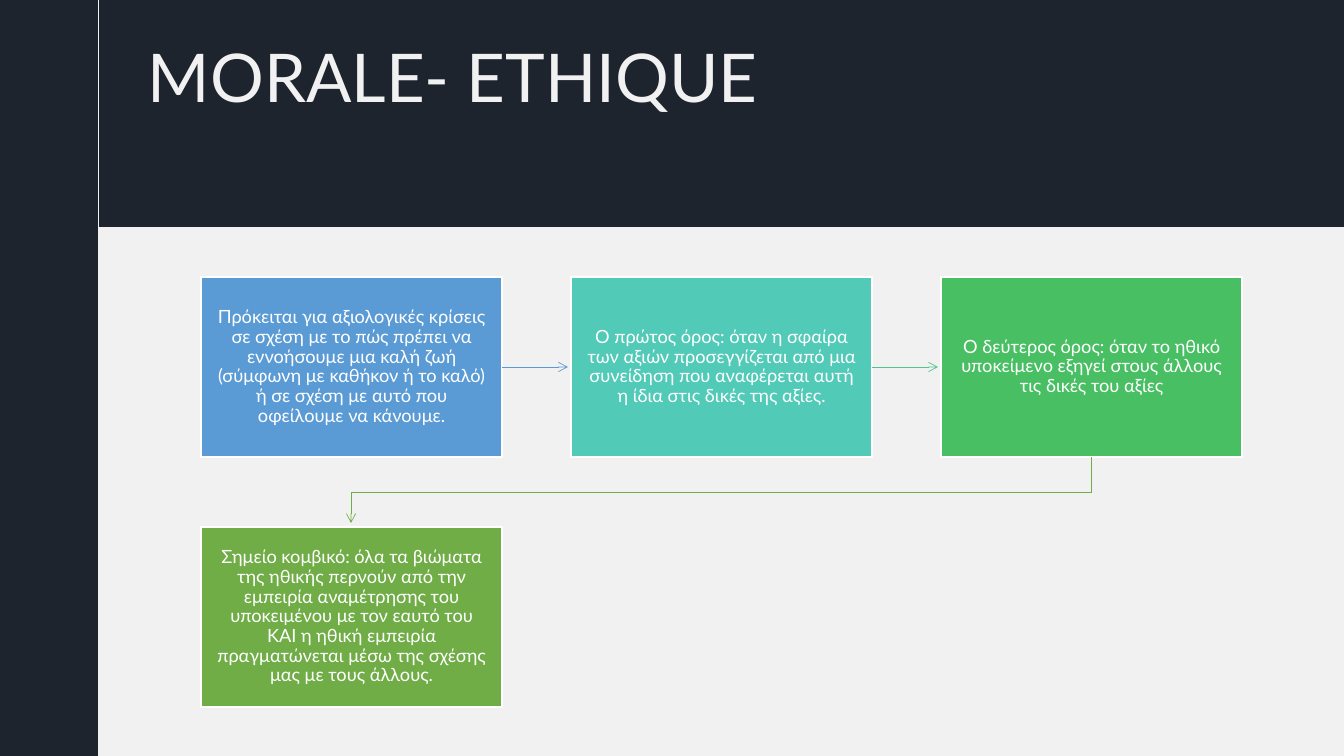
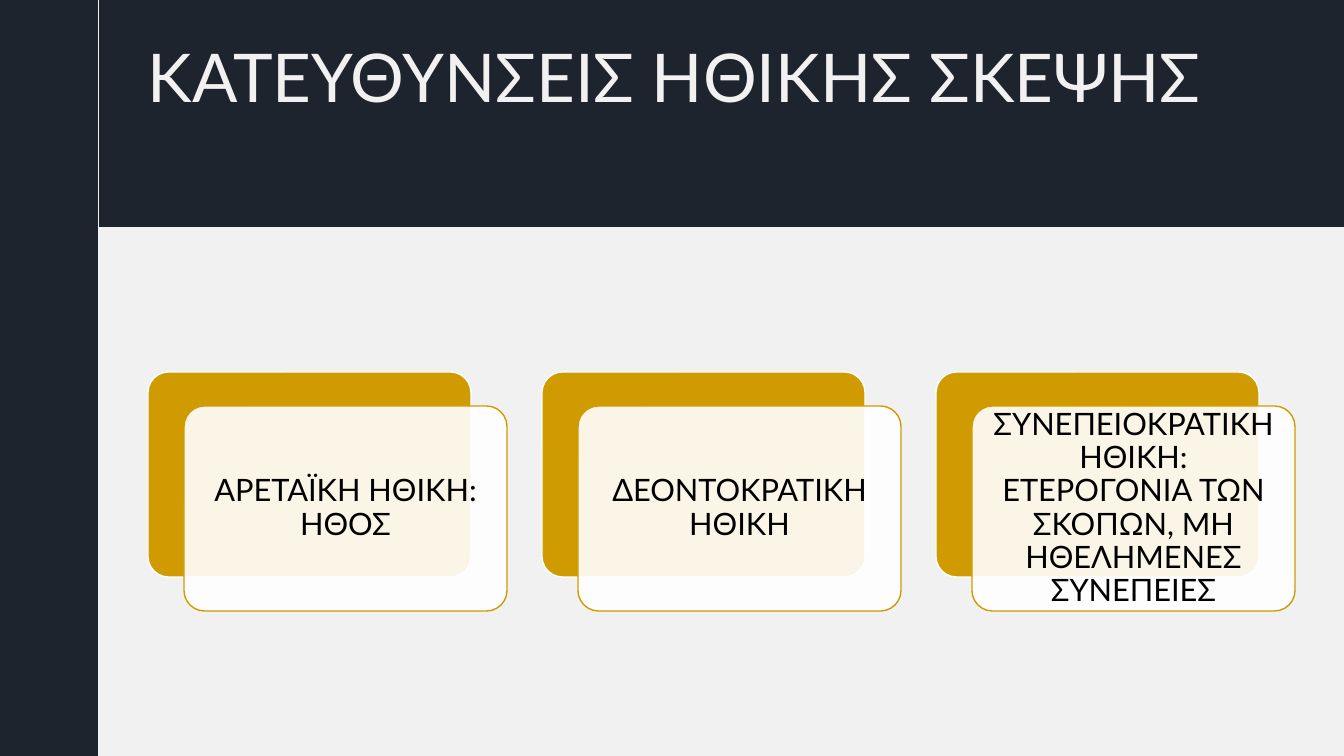
from dataclasses import dataclass

from lxml.etree import SubElement
from pptx import Presentation
from pptx.dml.color import RGBColor
from pptx.enum.shapes import MSO_CONNECTOR, MSO_SHAPE
from pptx.enum.text import MSO_ANCHOR, PP_ALIGN
from pptx.oxml.ns import qn
from pptx.util import Pt

PX = 12192000 / 1344  # EMU in one px


@dataclass(frozen=True)
class Theme:
    font: str = "Lato"
    dark: str = "1D242E"
    light: str = "F2F1F1"
    white: str = "FFFFFF"
    black: str = "000000"
    gold: str = "CF9B00"
    blue: str = "5B9BD5"
    teal: str = "52CAB8"
    mint: str = "4DC58D"
    emerald: str = "49BF64"
    green: str = "70AD47"
    title_size: int = 48
    step_size: int = 13
    card_size: int = 22


theme = Theme()


def write(shape, text, *, size, color, align=PP_ALIGN.CENTER,
          anchor=MSO_ANCHOR.MIDDLE, inset=0, spacing=0.9):
    frame = shape.text_frame
    frame.word_wrap = True
    frame.vertical_anchor = anchor
    frame.margin_left = frame.margin_right = round(inset * PX)
    frame.margin_top = frame.margin_bottom = round(inset * PX)
    para = frame.paragraphs[0]
    para.alignment = align
    para.line_spacing = spacing
    span = para.add_run()
    span.text = text
    span.font.name = theme.font
    span.font.size = Pt(size)
    span.font.color.rgb = RGBColor.from_string(color)


def paint(shape, *, fill=None, opacity=100, line=None, width=1, arrow=False):
    if hasattr(shape, "fill"):
        if fill:
            shape.fill.solid()
            shape.fill.fore_color.rgb = RGBColor.from_string(fill)
            if opacity < 100:
                color = shape.element.spPr.find(qn("a:solidFill"))[0]
                SubElement(color, qn("a:alpha"), val=str(opacity * 1000))
        else:
            shape.fill.background()
    if line:
        shape.line.color.rgb = RGBColor.from_string(line)
        shape.line.width = Pt(width)
        if arrow:
            SubElement(shape.line._get_or_add_ln(), qn("a:tailEnd"), type="arrow")
    else:
        shape.line.fill.background()
    if hasattr(shape, "shadow"):
        shape.shadow.inherit = False
    else:
        SubElement(shape.element.spPr, qn("a:effectLst"))


# Deck and background
deck = Presentation()
deck.slide_width, deck.slide_height = round(1344 * PX), round(756 * PX)
background = deck.slide_master.background.fill
background.solid()
background.fore_color.rgb = RGBColor.from_string(theme.light)

# Shared frame: side strip, title band, thin rule, title
pages = []
for heading in ("MORALE- ETHIQUE", "ΚΑΤΕΥΘΥΝΣΕΙΣ ΗΘΙΚΗΣ ΣΚΕΨΗΣ"):
    page = deck.slides.add_slide(deck.slide_layouts[5])
    for area in ((0, 0, 99, 756), (99, 0, 1245, 227)):
        panel = page.shapes.add_shape(MSO_SHAPE.RECTANGLE, *(round(v * PX) for v in area))
        paint(panel, fill=theme.dark)
    rule = page.shapes.add_connector(
        MSO_CONNECTOR.STRAIGHT, *(round(v * PX) for v in (99, 0, 99, 756)))
    paint(rule, line=theme.light, width=0.75)

    title = page.shapes.title
    title.left, title.top, title.width, title.height = (
        round(v * PX) for v in (148, 35, 1147, 139))
    write(title, heading, size=theme.title_size, color=theme.light,
          align=PP_ALIGN.LEFT, anchor=MSO_ANCHOR.TOP, spacing=1.0)
    title.element.getparent().append(title.element)  # in front of the band
    pages.append(page)

flow_page, cards_page = pages

# Flow of steps, three in a row
steps = [
    ("Πρόκειται για αξιολογικές κρίσεις σε σχέση με το πώς πρέπει να εννοήσουμε "
     "μια καλή ζωή (σύμφωνη με καθήκον ή το καλό) ή σε σχέση με αυτό που "
     "οφείλουμε να κάνουμε.", theme.blue),
    ("Ο πρώτος όρος: όταν η σφαίρα των αξιών προσεγγίζεται από μια συνείδηση "
     "που αναφέρεται αυτή η ίδια στις δικές της αξίες.", theme.teal),
    ("Ο δεύτερος όρος: όταν το ηθικό υποκείμενο εξηγεί στους άλλους τις δικές "
     "του αξίες", theme.emerald),
    ("Σημείο κομβικό: όλα τα βιώματα της ηθικής περνούν από την εμπειρία "
     "αναμέτρησης του υποκειμένου με τον εαυτό του ΚΑΙ η ηθική εμπειρία "
     "πραγματώνεται μέσω της σχέσης μας με τους άλλους.", theme.green),
]
left, top, width, height = 201, 277, 301, 180
column_step, row_step, arrow_length = 370, 250, 66
for index, (text, color) in enumerate(steps):
    row, column = divmod(index, 3)
    area = (left + column * column_step, top + row * row_step, width, height)
    box = flow_page.shapes.add_shape(MSO_SHAPE.RECTANGLE, *(round(v * PX) for v in area))
    paint(box, fill=color, line=theme.white)
    write(box, text, size=theme.step_size, color=theme.white, inset=15)

# Arrows along the row, then back to the next row
middle = top + height // 2
for column, color in enumerate((theme.blue, theme.mint)):
    start = left + column * column_step + width
    arrow = flow_page.shapes.add_connector(
        MSO_CONNECTOR.STRAIGHT,
        *(round(v * PX) for v in (start, middle, start + arrow_length, middle)))
    paint(arrow, line=color, width=0.5, arrow=True)

first_center = left + width // 2
last_center = first_center + 2 * column_step
bottom = top + height
turn = bottom + 35
outline = flow_page.shapes.build_freeform(last_center, bottom, scale=PX)
outline.add_line_segments(
    [(last_center, turn), (first_center, turn), (first_center, bottom + arrow_length)],
    close=False)
paint(outline.convert_to_shape(), line=theme.green, width=0.5, arrow=True)

# Cards, each a gold plate with a translucent label in front
labels = [
    "ΑΡΕΤΑΪΚΗ ΗΘΙΚΗ: ΗΘΟΣ",
    "ΔΕΟΝΤΟΚΡΑΤΙΚΗ ΗΘΙΚΗ",
    "ΣΥΝΕΠΕΙΟΚΡΑΤΙΚΗ ΗΘΙΚΗ: ΕΤΕΡΟΓΟΝΙΑ ΤΩΝ ΣΚΟΠΩΝ, ΜΗ ΗΘΕΛΗΜΕΝΕΣ ΣΥΝΕΠΕΙΕΣ",
]
for index, label in enumerate(labels):
    card_left = 148 + index * 394
    for x, y, look in (
        (card_left, 372, dict(fill=theme.gold, line=theme.white)),
        (card_left + 36, 406, dict(fill=theme.white, opacity=90, line=theme.gold)),
    ):
        card = cards_page.shapes.add_shape(
            MSO_SHAPE.ROUNDED_RECTANGLE, *(round(v * PX) for v in (x, y, 323, 205)))
        card.adjustments[0] = 0.1
        paint(card, **look)
    write(card, label, size=theme.card_size, color=theme.black, inset=9)

deck.save("out.pptx")
